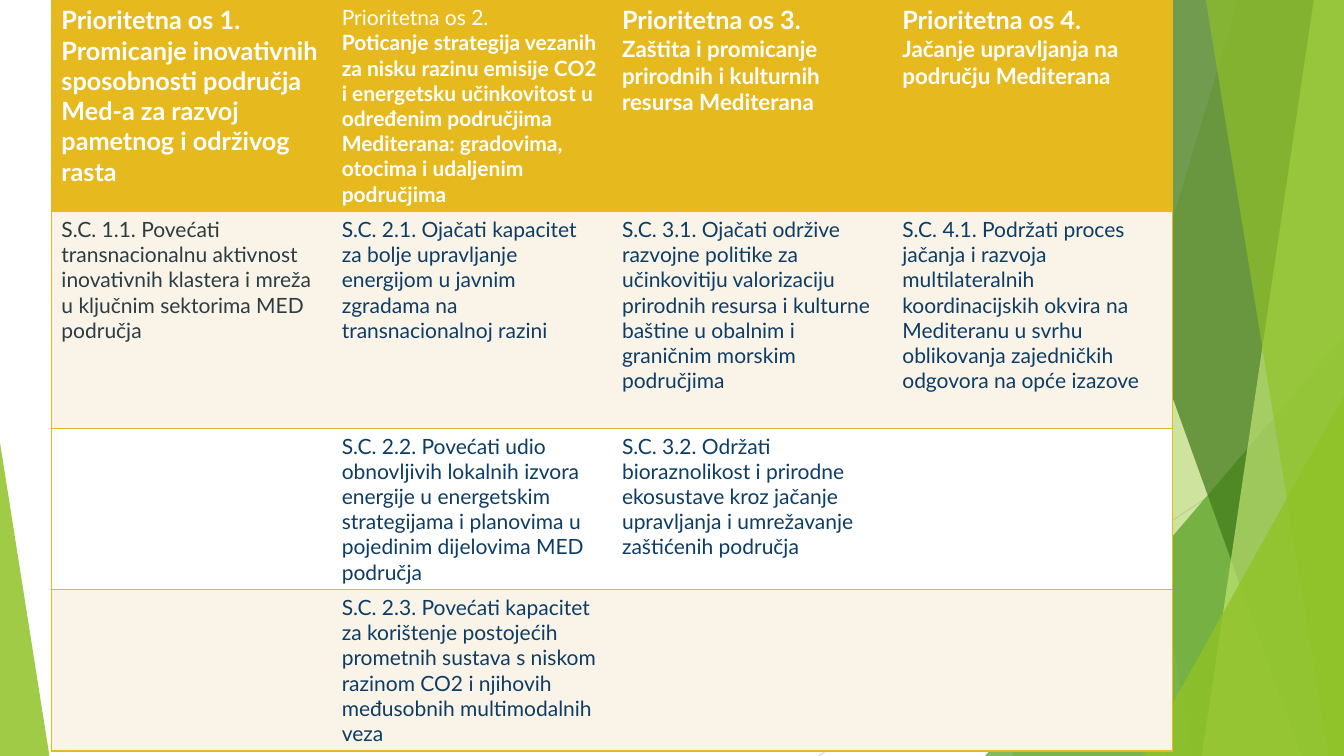
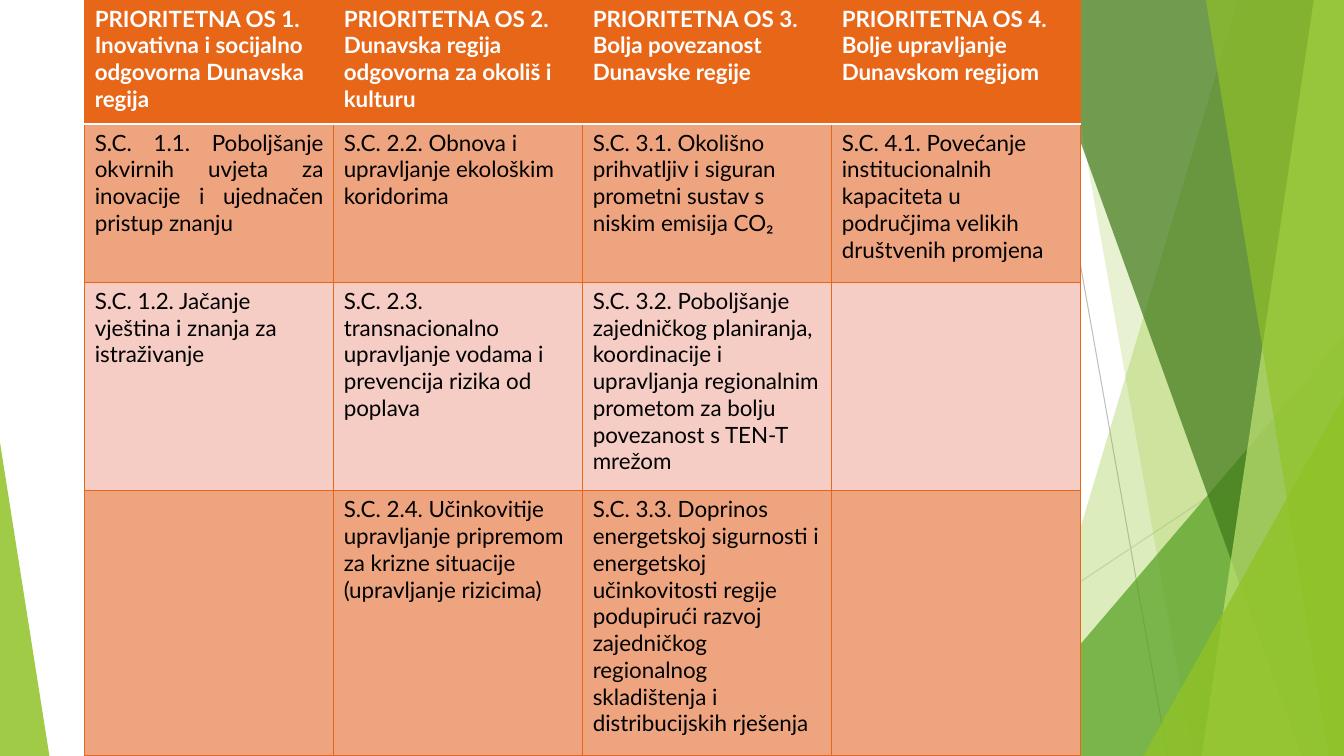
from lxml.etree import SubElement
from pptx import Presentation
from pptx.dml.color import RGBColor
from pptx.enum.shapes import MSO_CONNECTOR, MSO_SHAPE
from pptx.enum.text import PP_ALIGN
from pptx.oxml.ns import qn
from pptx.util import Inches, Pt

WIDE, HIGH = 13.33, 7.5
FONT = "Lato"
COLOR = {
    "white": "FFFFFF", "black": "000000", "gray": "BFBFBF", "silver": "D9D9D9",
    "lime": "90C226", "green": "54A021", "forest": "3F7819", "pale": "C0E474",
    "gold": "E6B91E", "cream": "FAF3E8", "slate": "2C3C43", "navy": "0D3D65",
    "orange": "E76618", "salmon": "EFA480", "pink": "F5CDC5",
}

RAYS = [("gray", 10.25, 0, 11.58, HIGH), ("silver", WIDE, 4.03, 8.12, HIGH)]
# Band: colour, opacity, (top x, bottom x), reaching to the right edge.
# Peak: colour, opacity, (left, top, width, apex), reaching to the bottom edge.
SHARDS = [
    ("lime", 30, (12.28, 10.04)),
    ("lime", 20, (10.5, 11.83)),
    ("green", 72, (9.77, 3.33, 3.56, 1)),
    ("forest", 70, (10.21, 12.91)),
    ("pale", 70, (13.03, 11.92)),
    ("lime", 65, (11.96, 13.18)),
    ("lime", 80, (11.34, 3.93, 1.99, 1)),
    ("lime", 85, (0, 4.39, 0.49, 0)),
]

# Heads: title, title size, title bold, text, text size.
TABLES = [
    {
        "left": 0.51, "col": 2.78, "rows": [2.1, 2.15, 1.6, 1.6],
        "main": "gold", "fills": ["gold", "cream", "white", "cream"],
        "ink": "navy", "size": 15, "grid": False, "rule": ("gold", 1),
        "odd": {(1, 0): "slate"}, "just": [],
        "heads": [
            ("Prioritetna os 1.", 18, True,
             "Promicanje inovativnih sposobnosti područja Med-a za razvoj "
             "pametnog i održivog rasta", 18),
            ("Prioritetna os 2.", 15, False,
             "Poticanje strategija vezanih za nisku razinu emisije CO2 i "
             "energetsku učinkovitost u određenim područjima Mediterana: "
             "gradovima, otocima i udaljenim područjima", 15),
            ("Prioritetna os 3.", 18, True,
             "Zaštita i promicanje prirodnih i kulturnih resursa Mediterana", 16),
            ("Prioritetna os 4.", 18, True,
             "Jačanje upravljanja na području Mediterana", 16),
        ],
        "body": [
            ["S.C. 1.1. Povećati transnacionalnu aktivnost inovativnih klastera i "
             "mreža u ključnim sektorima MED područja",
             "S.C. 2.1. Ojačati kapacitet za bolje upravljanje energijom u javnim "
             "zgradama na transnacionalnoj razini",
             "S.C. 3.1. Ojačati održive razvojne politike za učinkovitiju "
             "valorizaciju prirodnih resursa i kulturne baštine u obalnim i "
             "graničnim morskim područjima",
             "S.C. 4.1. Podržati proces jačanja i razvoja multilateralnih "
             "koordinacijskih okvira na Mediteranu u svrhu oblikovanja "
             "zajedničkih odgovora na opće izazove"],
            ["",
             "S.C. 2.2. Povećati udio obnovljivih lokalnih izvora energije u "
             "energetskim strategijama i planovima u pojedinim dijelovima MED "
             "područja",
             "S.C. 3.2. Održati bioraznolikost i prirodne ekosustave kroz jačanje "
             "upravljanja i umrežavanje zaštićenih područja",
             ""],
            ["",
             "S.C. 2.3. Povećati kapacitet za korištenje postojećih prometnih "
             "sustava s niskom razinom CO2 i njihovih međusobnih multimodalnih veza",
             "", ""],
        ],
    },
    {
        "left": 0.84, "col": 2.47, "rows": [1.23, 1.57, 2.07, 2.63],
        "main": "orange", "fills": ["orange", "salmon", "pink", "salmon"],
        "ink": "black", "size": 16, "grid": True, "rule": ("white", 1.5),
        "odd": {}, "just": [(1, 0)],
        "heads": [
            ("PRIORITETNA OS 1.", 16, True,
             "Inovativna i socijalno odgovorna Dunavska regija", 16),
            ("PRIORITETNA OS 2.", 16, True,
             "Dunavska regija odgovorna za okoliš i kulturu", 16),
            ("PRIORITETNA OS 3.", 16, True, "Bolja povezanost Dunavske regije", 16),
            ("PRIORITETNA OS 4.", 16, True,
             "Bolje upravljanje Dunavskom regijom", 16),
        ],
        "body": [
            ["S.C. 1.1. Poboljšanje okvirnih uvjeta za inovacije i ujednačen "
             "pristup znanju",
             "S.C. 2.2. Obnova i upravljanje ekološkim koridorima",
             "S.C. 3.1. Okolišno prihvatljiv i siguran prometni sustav s niskim "
             "emisija CO₂",
             "S.C. 4.1. Povećanje institucionalnih kapaciteta u područjima "
             "velikih društvenih promjena"],
            ["S.C. 1.2. Jačanje vještina i znanja za istraživanje",
             "S.C. 2.3. transnacionalno upravljanje vodama i prevencija rizika od "
             "poplava",
             "S.C. 3.2. Poboljšanje zajedničkog planiranja, koordinacije i "
             "upravljanja regionalnim prometom za bolju povezanost s TEN-T mrežom",
             ""],
            ["",
             "S.C. 2.4. Učinkovitije upravljanje pripremom za krizne situacije "
             "(upravljanje rizicima)",
             "S.C. 3.3. Doprinos energetskoj sigurnosti i energetskoj "
             "učinkovitosti regije podupirući razvoj zajedničkog regionalnog "
             "skladištenja i distribucijskih rješenja",
             ""],
        ],
    },
]


def rgb(name):
    return RGBColor.from_string(COLOR[name])


def border(cell, side, name, width):
    """Draw one side (L, R, T or B) of a cell; no name means no line."""
    line = SubElement(cell._tc.get_or_add_tcPr(), qn("a:ln" + side), w=str(Pt(width)))
    if name:
        fill = SubElement(line, qn("a:solidFill"))
        SubElement(fill, qn("a:srgbClr"), val=COLOR[name])
    else:
        SubElement(line, qn("a:noFill"))


prs = Presentation()
prs.slide_width, prs.slide_height = Inches(WIDE), Inches(HIGH)

for data in TABLES:
    slide = prs.slides.add_slide(prs.slide_layouts[6])
    shapes = slide.shapes

    for name, *ends in RAYS:
        ray = shapes.add_connector(MSO_CONNECTOR.STRAIGHT, *map(Inches, ends))
        ray.line.color.rgb = rgb(name)
        ray.line.width = Pt(0.75)
        SubElement(ray._element.spPr, qn("a:effectLst"))

    for name, alpha, form in SHARDS:
        if len(form) == 2:
            top, base = form
            path = shapes.build_freeform(Inches(top), 0)
            path.add_line_segments([
                (Inches(WIDE), 0), (Inches(WIDE), Inches(HIGH)),
                (Inches(base), Inches(HIGH))])
            shard = path.convert_to_shape()
        else:
            left, top, width, apex = form
            shard = shapes.add_shape(
                MSO_SHAPE.ISOSCELES_TRIANGLE, Inches(left), Inches(top),
                Inches(width), Inches(HIGH - top))
            shard.adjustments[0] = apex
        shard.shadow.inherit = False
        shard.fill.solid()
        shard.fill.fore_color.rgb = rgb(name)
        shade = shard._element.spPr.find(".//" + qn("a:srgbClr"))
        SubElement(shade, qn("a:alpha"), val=str(alpha * 1000))
        shard.line.fill.background()

    rows, cols = len(data["rows"]), len(data["heads"])
    table = shapes.add_table(
        rows, cols, Inches(data["left"]), 0, Inches(data["col"] * cols),
        Inches(sum(data["rows"]))).table
    table.horz_banding = False
    for col in table.columns:
        col.width = Inches(data["col"])
    for row, height in zip(table.rows, data["rows"]):
        row.height = Inches(height)

    main = data["main"]
    for r in range(rows):
        for c in range(cols):
            cell = table.cell(r, c)
            left = main if data["grid"] or c == 0 else None
            right = main if data["grid"] or c == cols - 1 else None
            border(cell, "L", left, 1)
            border(cell, "R", right, 1)
            border(cell, "T", *(data["rule"] if r == 1 else (main, 1)))
            border(cell, "B", *(data["rule"] if r == 0 else (main, 1)))
            cell.fill.solid()
            cell.fill.fore_color.rgb = rgb(data["fills"][r])

            if r == 0:
                title, big, bold, text, small = data["heads"][c]
                lines = [(title, big, bold), (text, small, True)]
                ink = "white"
            else:
                text = data["body"][r - 1][c]
                lines = [(text, data["size"], False)] if text else []
                ink = data["odd"].get((r, c), data["ink"])
            frame = cell.text_frame
            for i, (text, size, bold) in enumerate(lines):
                para = frame.add_paragraph() if i else frame.paragraphs[0]
                if (r, c) in data["just"]:
                    para.alignment = PP_ALIGN.JUSTIFY
                run = para.add_run()
                run.text = text
                run.font.name = FONT
                run.font.size = Pt(size)
                run.font.bold = bold
                run.font.color.rgb = rgb(ink)

prs.save("out.pptx")
